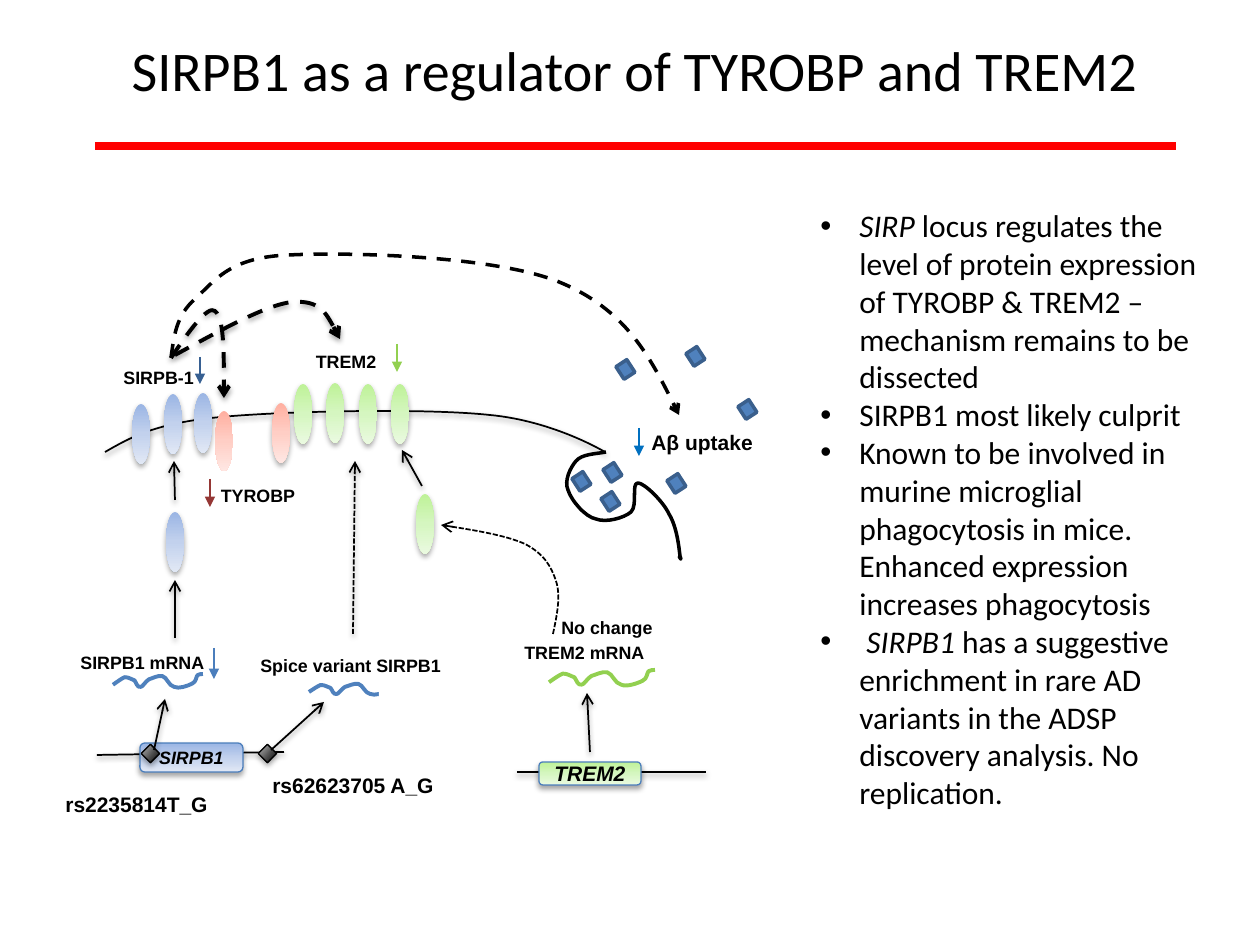
from dataclasses import dataclass

from lxml.etree import SubElement
from pptx import Presentation
from pptx.dml.color import RGBColor
from pptx.enum.dml import MSO_LINE
from pptx.enum.shapes import MSO_CONNECTOR, MSO_SHAPE
from pptx.enum.text import MSO_ANCHOR, MSO_AUTO_SIZE, PP_ALIGN
from pptx.oxml.ns import qn
from pptx.util import Emu, Pt

PX = 914400 / 126


@dataclass(frozen=True)
class Theme:
    black: str = "000000"
    white: str = "FFFFFF"
    red: str = "FF0000"
    outline: str = "4B7EBC"
    strand_blue: str = "4F81BD"
    strand_green: str = "92D050"
    plaque_edge: str = "3A5F8C"
    blue: tuple = ("9AB5E4", "C2D1ED", "E1E8F5")
    green: tuple = ("BEF297", "D5F6C0", "EAFAE0")
    pink: tuple = ("FFAFA0", "FFCEC5", "FFE7E3")
    variant: tuple = ("000000", "BDBDBD")
    label_font: str = "Arial"
    body_font: str = "Calibri"
    title: float = 32
    body: float = 18
    label: float = 10.2
    big_label: float = 12


THEME = Theme()
WAVE = [(0, 77), (5, 54), (10, 31), (13, 23), (18, 23), (20, 38), (24, 46),
        (26, 62), (27, 100), (31, 92), (33, 92), (36, 54), (40, 38),
        (44, 31), (50, 8), (55, 15), (60, 23), (62, 85), (68, 92),
        (73, 108), (83, 85), (88, 69), (93, 54), (92, 23), (94, 8),
        (96, 0), (98, 0), (100, 0)]


def px(value):
    return Emu(round(value * PX))


def style_font(font, size, name, bold=False, italic=None):
    font.size, font.name, font.bold, font.italic = Pt(size), name, bold, italic
    font.color.rgb = RGBColor.from_string(THEME.black)


def set_shadow(shape, alpha=35, distance=1.8):
    properties = shape._element.spPr
    effects = properties.find(qn("a:effectLst"))
    if effects is None:
        effects = SubElement(properties, qn("a:effectLst"))
    if alpha:
        outer = SubElement(effects, qn("a:outerShdw"), blurRad=str(Pt(3.1)),
                           dist=str(Pt(distance)), dir="5400000", rotWithShape="0")
        color = SubElement(outer, qn("a:srgbClr"), val=THEME.black)
        SubElement(color, qn("a:alpha"), val=str(alpha * 1000))


def set_line(shape, color, width, dash=None, head=None):
    line = shape.line
    line.color.rgb = RGBColor.from_string(color)
    line.width = Pt(width)
    if dash:
        line.dash_style = dash
    if head:
        SubElement(line._get_or_add_ln(), qn("a:tailEnd"), type=head)


def set_gradient(shape, colors, angle=270):
    shape.fill.gradient()
    shape.fill.gradient_angle = angle
    stops = shape._element.spPr.find(qn("a:gradFill")).find(qn("a:gsLst"))
    for stop in list(stops):
        stops.remove(stop)
    for index, color in enumerate(colors):
        position = 100000 * index // (len(colors) - 1)
        stop = SubElement(stops, qn("a:gs"), pos=str(position))
        SubElement(stop, qn("a:srgbClr"), val=color)


def add_preset(page, kind, left, top, width, height, fill, edge=None,
               edge_width=0.75, rotation=0, angle=270, shadow=35):
    shape = page.shapes.add_shape(kind, px(left), px(top), px(width), px(height))
    shape.shadow.inherit = False
    shape.rotation = rotation
    if isinstance(fill, tuple):
        set_gradient(shape, fill, angle)
    else:
        shape.fill.solid()
        shape.fill.fore_color.rgb = RGBColor.from_string(fill)
    if edge:
        set_line(shape, edge, edge_width)
    else:
        shape.line.fill.background()
    set_shadow(shape, shadow)
    return shape


def add_proteins(page, colors, places, shadow=35):
    for left, top in places:
        add_preset(page, MSO_SHAPE.OVAL, left, top, 18, 60, colors, shadow=shadow)


def add_gene(page, name, left, top, width, height, colors, size):
    box = add_preset(page, MSO_SHAPE.ROUNDED_RECTANGLE, left, top, width, height,
                     colors, THEME.outline)
    frame = box.text_frame
    frame.margin_left = frame.margin_right = frame.margin_top = frame.margin_bottom = 0
    frame.vertical_anchor = MSO_ANCHOR.MIDDLE
    para = frame.paragraphs[0]
    para.text, para.alignment = name, PP_ALIGN.CENTER
    style_font(para.font, size, THEME.label_font, True, True)


def add_straight(page, start, end, color=THEME.black, width=1, dash=None,
                 head=None, shadow=38):
    line = page.shapes.add_connector(MSO_CONNECTOR.STRAIGHT, *map(px, start + end))
    set_line(line, color, width, dash, head)
    set_shadow(line, shadow, 1.6)


def add_curve(page, points, color=THEME.black, width=1.0, dash=None, head=None,
              shadow=0, distance=1.8):
    places = [(px(x), px(y)) for x, y in points]
    builder = page.shapes.build_freeform(*places[0])
    builder.add_line_segments(places[1:], close=False)
    curve = builder.convert_to_shape()
    segments = list(curve._element.iter(qn("a:lnTo")))
    outline = segments[0].getparent()
    for first in range(0, len(segments), 3):
        bend = SubElement(outline, qn("a:cubicBezTo"))
        for segment in segments[first:first + 3]:
            bend.append(segment[0])
            outline.remove(segment)
    curve.shadow.inherit = False
    curve.fill.background()
    set_line(curve, color, width, dash, head)
    set_shadow(curve, shadow, distance)


def add_strand(page, left, top, width, height, color):
    points = [(left + x * width / 100, top + y * height / 100) for x, y in WAVE]
    add_curve(page, points, color, 2.25)


def add_text(page, text, left, top, width, height, size=THEME.label,
             align=PP_ALIGN.LEFT, wrap=True, font=THEME.label_font, bold=True):
    box = page.shapes.add_textbox(px(left), px(top), px(width), px(height))
    frame = box.text_frame
    frame.word_wrap = wrap
    frame.auto_size = MSO_AUTO_SIZE.SHAPE_TO_FIT_TEXT
    para = frame.paragraphs[0]
    para.text, para.alignment = text, align
    style_font(para.font, size, font, bold)
    return frame


def add_bullets(page, items, left, top, width, height):
    frame = page.shapes.add_textbox(px(left), px(top), px(width), px(height)).text_frame
    frame.word_wrap = True
    frame.auto_size = MSO_AUTO_SIZE.SHAPE_TO_FIT_TEXT
    for index, item in enumerate(items):
        para = frame.add_paragraph() if index else frame.paragraphs[0]
        properties = para._p.get_or_add_pPr()
        properties.set("marL", str(px(39)))
        properties.set("indent", str(-px(39)))
        SubElement(properties, qn("a:buFont"), typeface=THEME.label_font)
        SubElement(properties, qn("a:buChar"), char="•")
        style_font(para.font, THEME.body, THEME.body_font)
        for text, italic in item:
            span = para.add_run()
            span.text = text
            if italic:
                span.font.italic = True


def add_membrane(page):
    add_curve(page, [(105, 452), (131, 437), (156, 423), (221, 417), (285, 411),
                     (426, 408), (490, 415), (554, 421), (605, 452), (605, 452)],
              shadow=38, distance=1.6)
    add_proteins(page, THEME.blue, [(132, 404), (164, 394), (194, 393), (166, 512)])
    add_proteins(page, THEME.green,
                 [(294, 384), (326, 383), (359, 384), (391, 384), (416, 494)])
    add_proteins(page, THEME.pink, [(272, 403)])
    add_proteins(page, THEME.pink, [(215, 411)], 0)


def add_genes(page):
    add_straight(page, (284, 752), (97, 755))
    add_straight(page, (517, 772), (706, 772))
    add_gene(page, "SIRPB1", 140, 743, 103, 29, THEME.blue, THEME.label)
    add_gene(page, "TREM2", 539, 762, 102, 23, THEME.green, THEME.big_label)
    for left in (144, 261):
        add_preset(page, MSO_SHAPE.RECTANGLE, left, 747, 13, 13, THEME.variant,
                   THEME.black, rotation=315, angle=90)
    add_strand(page, 113, 674, 90, 14, THEME.strand_blue)
    add_strand(page, 309, 682, 90, 13, THEME.strand_blue)
    add_preset(page, MSO_SHAPE.RECTANGLE, 379, 673, 44, 50, THEME.white, shadow=0)
    add_strand(page, 549, 670, 106, 16, THEME.strand_green)


def add_uptake(page):
    add_curve(page, [(606, 452), (595, 454), (582, 454), (576, 461), (570, 468),
                     (564, 481), (568, 490), (571, 500), (585, 517), (596, 519),
                     (606, 523), (624, 518), (631, 512), (638, 505), (631, 483),
                     (638, 483), (644, 483), (663, 501), (669, 514), (677, 527),
                     (679, 548), (680, 556), (682, 562), (680, 558), (679, 556)], width=2)
    for left, top in [(575, 474), (604, 494), (606, 465), (619, 362), (670, 476),
                      (741, 402), (689, 349)]:
        add_preset(page, MSO_SHAPE.RECTANGLE, left, top, 13, 15, THEME.strand_blue,
                   THEME.plaque_edge, 2, 326.9, shadow=0)


def add_arrows(page):
    for start, end in [((154, 750), (165, 699)), ((271, 750), (324, 702)),
                       ((422, 486), (402, 450)), ((175, 638), (175, 580)),
                       ((175, 500), (174, 461)), ((590, 752), (587, 693))]:
        add_straight(page, start, end, head="arrow")
    add_straight(page, (353, 634), (355, 461), dash=MSO_LINE.SQUARE_DOT, head="arrow")
    for x, top, bottom, color in [(214, 648, 679, THEME.outline), (210, 479, 507, "953735"),
                                  (200, 357, 384, "376092"), (397, 344, 372, "92D050"),
                                  (639, 428, 456, "0070C0")]:
        add_straight(page, (x, top), (x, bottom), color, 0.75, head="triangle", shadow=0)
    add_curve(page, [(553, 634), (557, 615), (561, 596), (556, 581), (551, 566), (544, 554),
                     (525, 544), (507, 536), (474, 530), (441, 525)],
              dash=MSO_LINE.SQUARE_DOT, head="arrow")
    add_curve(page, [(171, 358), (174, 336), (176, 316), (195, 299), (215, 281), (229, 257),
                     (290, 255), (350, 252), (495, 256), (559, 282), (625, 309), (653, 362),
                     (679, 415)], width=2, dash=MSO_LINE.DASH, head="arrow")
    for points in [[(171, 358), (189, 331), (208, 305), (215, 311), (224, 318),
                    (224, 358), (224, 398)],
                   [(175, 355), (221, 330), (266, 305), (292, 302), (320, 300),
                    (330, 319), (340, 339)]]:
        add_curve(page, points, width=2.25, dash=MSO_LINE.DASH, head="arrow", shadow=35)


def add_labels(page):
    add_text(page, "TREM2 mRNA", 512, 635, 154, 34)
    add_text(page, "Spice variant SIRPB1", 248, 648, 241, 34)
    add_text(page, "TYROBP", 198, 478, 120, 34, align=PP_ALIGN.CENTER)
    add_text(page, "TREM2 ", 301, 344, 95, 34, align=PP_ALIGN.CENTER)
    add_text(page, "SIRPB-1", 111, 360, 120, 34)
    add_text(page, "SIRPB1 mRNA", 68, 645, 249, 34)
    add_text(page, "No change", 549, 610, 154, 34)
    add_text(page, "Aβ uptake", 639, 423, 135, 38, THEME.big_label)
    add_text(page, "rs62623705 A_G", 260, 766, 188, 38, THEME.big_label, wrap=False)
    add_text(page, "rs2235814T_G", 53, 785, 168, 38, THEME.big_label, wrap=False)


def main():
    deck = Presentation()
    deck.slide_width, deck.slide_height = px(1260), px(945)
    page = deck.slides.add_slide(deck.slide_layouts[6])
    add_membrane(page)
    add_genes(page)
    add_uptake(page)
    add_arrows(page)
    add_labels(page)
    title = add_text(page, "SIRPB1 as a regulator of TYROBP and TREM2", 10, -10, 1250, 158,
                     THEME.title, PP_ALIGN.CENTER, font=THEME.body_font, bold=False)
    title.auto_size = MSO_AUTO_SIZE.NONE
    title.vertical_anchor = MSO_ANCHOR.MIDDLE
    add_straight(page, (95, 146), (1176, 146), THEME.red, 4.5, shadow=0)
    add_bullets(page, [
        [("SIRP", True), (" locus regulates the level of protein expression of TYROBP & TREM2 "
                          "– mechanism remains to be dissected", False)],
        [("SIRPB1 most likely culprit", False)],
        [("Known to be involved in murine microglial phagocytosis in mice. "
          "Enhanced expression increases phagocytosis", False)],
        [(" ", False), ("SIRPB1", True), (" has a suggestive enrichment in rare AD variants "
                                          "in the ADSP discovery analysis. No replication.", False)],
    ], 808, 200, 406, 624)
    deck.save("out.pptx")


if __name__ == "__main__":
    main()
